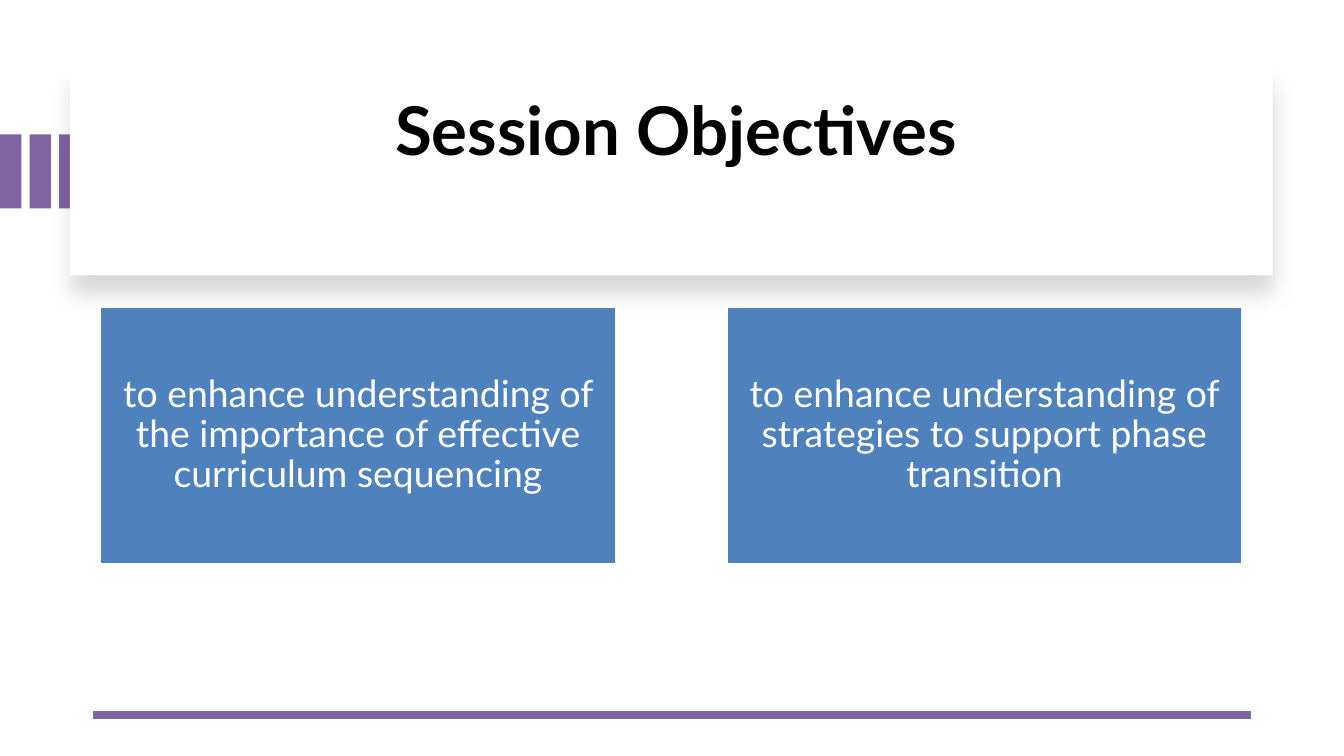
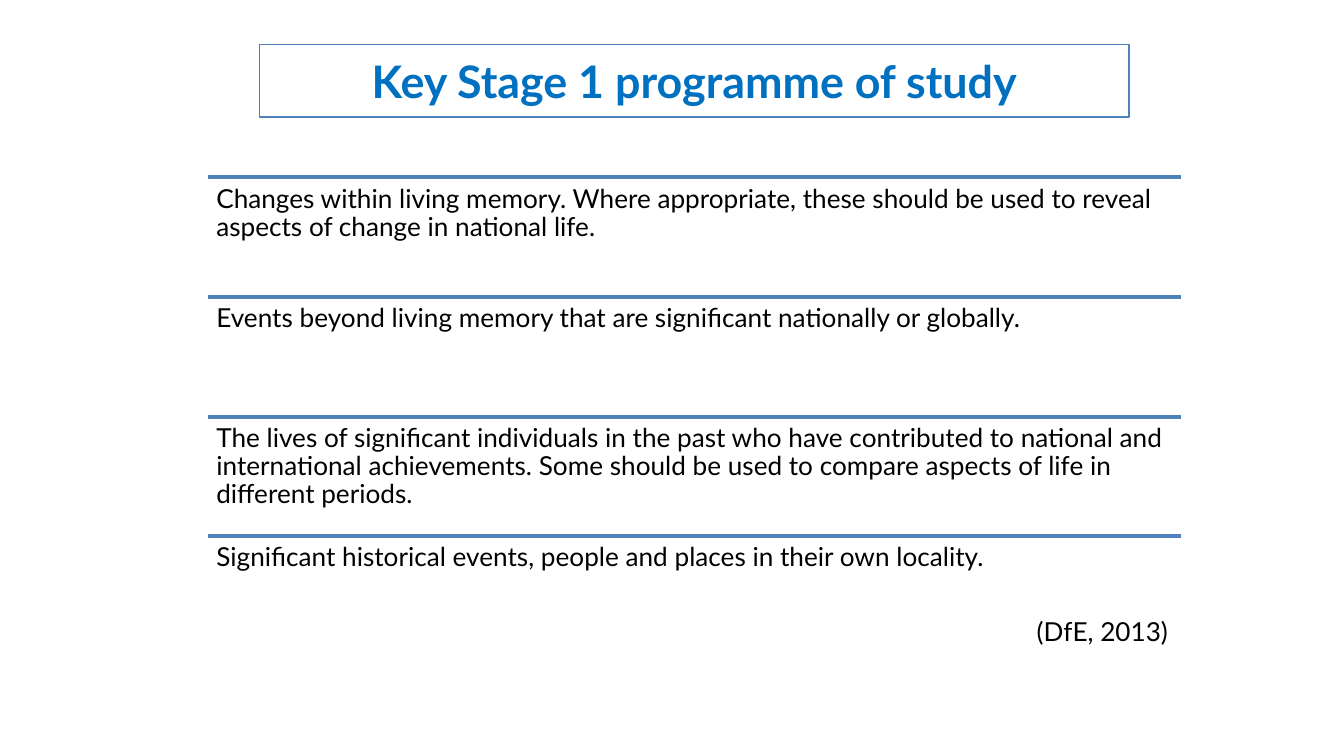
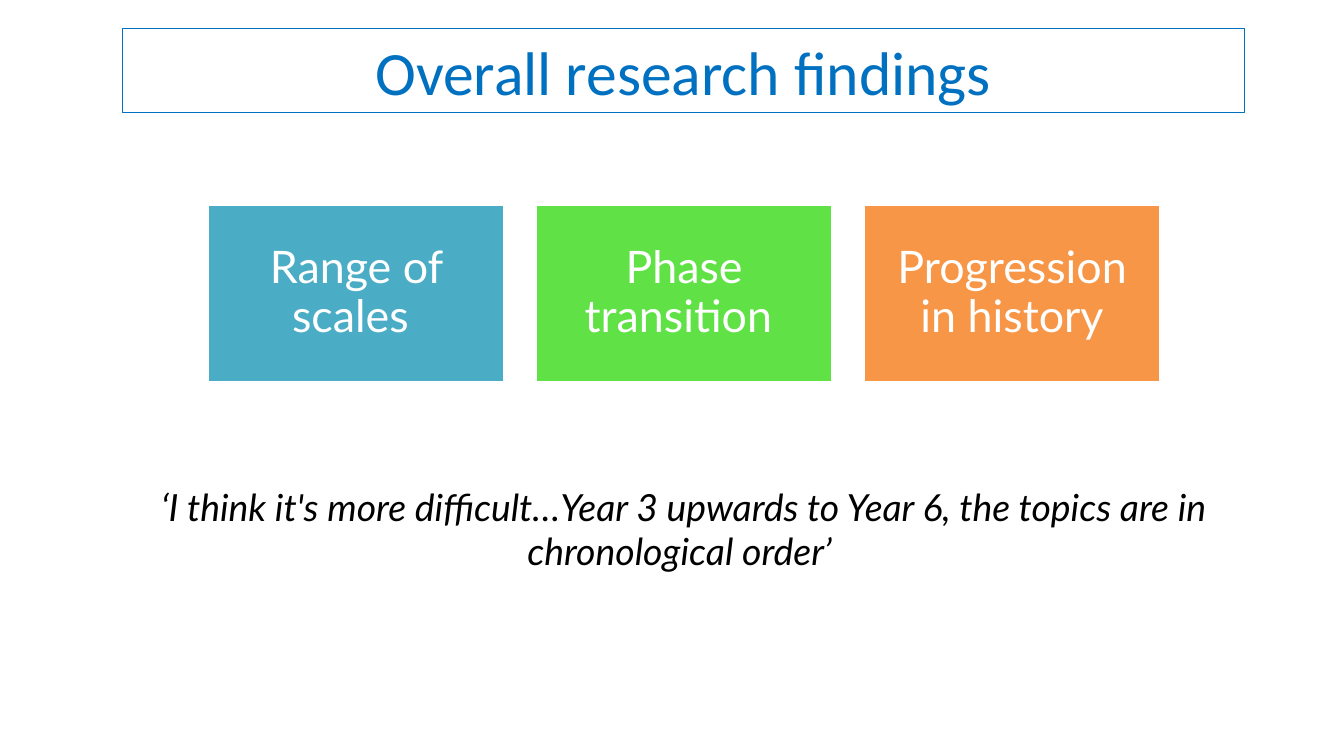
from lxml import etree
from pptx import Presentation
from pptx.dml.color import RGBColor
from pptx.enum.shapes import MSO_CONNECTOR, MSO_SHAPE
from pptx.enum.text import MSO_ANCHOR, MSO_AUTO_SIZE, PP_ALIGN
from pptx.oxml.ns import qn
from pptx.util import Pt

PX = 9144
RECT = MSO_SHAPE.RECTANGLE
STRAIGHT = MSO_CONNECTOR.STRAIGHT
TOP = MSO_ANCHOR.TOP
MIDDLE = MSO_ANCHOR.MIDDLE
FIXED = MSO_AUTO_SIZE.NONE
LEFT = PP_ALIGN.LEFT
CENTER = PP_ALIGN.CENTER
RIGHT = PP_ALIGN.RIGHT

BLACK = RGBColor(0x00, 0x00, 0x00)
WHITE = RGBColor(0xFF, 0xFF, 0xFF)
PURPLE = RGBColor(0x80, 0x64, 0xA2)
BLUE = RGBColor(0x4F, 0x81, 0xBD)
AZURE = RGBColor(0x00, 0x70, 0xC0)
TEAL = RGBColor(0x4B, 0xAC, 0xC6)
GREEN = RGBColor(0x60, 0xE1, 0x46)
ORANGE = RGBColor(0xF7, 0x96, 0x46)

FONT = "Lato"
GOALS = [
    "to enhance understanding of the importance of effective curriculum sequencing",
    "to enhance understanding of strategies to support phase transition",
]
TOPICS = [
    "Changes within living memory. Where appropriate, these should be used to "
    "reveal aspects of change in national life.",
    "Events beyond living memory that are significant nationally or globally.",
    "The lives of significant individuals in the past who have contributed to "
    "national and international achievements. Some should be used to compare "
    "aspects of life in different periods.",
    "Significant historical events, people and places in their own locality.",
]
THEMES = [
    ("Range of scales ", TEAL),
    ("Phase transition ", GREEN),
    ("Progression in history", ORANGE),
]
QUOTE = (
    "‘I think it's more difficult…Year 3 upwards to Year 6, "
    "the topics are in chronological order’ "
)


def scale(*nums):
    return [num * PX for num in nums]


def set_frame(frame, anchor, pads=(10, 5, 10, 5)):
    frame.word_wrap = True
    frame.auto_size = FIXED
    frame.vertical_anchor = anchor
    (frame.margin_left, frame.margin_top,
     frame.margin_right, frame.margin_bottom) = scale(*pads)


def add_run(para, text, size, color, align, space=1.0, font=FONT,
            bold=False, italic=False):
    para.alignment = align
    para.line_spacing = space
    run = para.add_run()
    run.text = text
    run.font.name = font
    run.font.size = Pt(size)
    run.font.color.rgb = color
    run.font.bold = bold
    run.font.italic = italic


def add_break(para, size):
    para.add_line_break()
    points = str(size * 100)
    etree.SubElement(para._p[-1], qn("a:rPr"), sz=points)
    etree.SubElement(para._p, qn("a:endParaRPr"), sz=points)


def add_title(slide, text, at, size, color, edge=None, space=1.0,
              font=FONT, bold=False):
    title = slide.shapes.title
    title.left, title.top, title.width, title.height = scale(*at)
    if edge is not None:
        title.line.color.rgb = edge
        title.line.width = Pt(0.75)
    set_frame(title.text_frame, MIDDLE)
    para = title.text_frame.paragraphs[0]
    add_run(para, text, size, color, CENTER, space, font, bold)
    title._element.getparent().append(title._element)
    return para


def add_rect(slide, at, fill):
    rect = slide.shapes.add_shape(RECT, *scale(*at))
    rect.shadow.inherit = False
    rect.fill.solid()
    rect.fill.fore_color.rgb = fill
    rect.line.fill.background()
    return rect


def add_tile(slide, at, fill, text, size, pad):
    tile = add_rect(slide, at, fill)
    tile.line.color.rgb = WHITE
    tile.line.width = Pt(2)
    set_frame(tile.text_frame, MIDDLE, [pad] * 4)
    add_run(tile.text_frame.paragraphs[0], text, size, WHITE, CENTER, 0.9)


def add_card(slide, at):
    card = add_rect(slide, at, WHITE)
    effects = card._element.spPr.find(qn("a:effectLst"))
    shade = etree.SubElement(
        effects, qn("a:outerShdw"), blurRad=str(Pt(11)), dist=str(Pt(10)),
        dir="5400000", algn="t", rotWithShape="0")
    black = etree.SubElement(shade, qn("a:srgbClr"), val=str(BLACK))
    etree.SubElement(black, qn("a:alpha"), val="15000")


def add_rule(slide, start, end, y, color, width):
    rule = slide.shapes.add_connector(STRAIGHT, *scale(start, y, end, y))
    rule.line.color.rgb = color
    rule.line.width = Pt(width)
    etree.SubElement(rule._element.spPr, qn("a:effectLst"))


def add_text(slide, at, pads=(10, 5, 10, 5)):
    frame = slide.shapes.add_textbox(*scale(*at)).text_frame
    set_frame(frame, TOP, pads)
    return frame


def new_slide(deck):
    return deck.slides.add_slide(deck.slide_layouts[5])


def build_goals(deck):
    slide = new_slide(deck)
    for col in range(3):
        add_rect(slide, (col * 22, 100, 16, 55), PURPLE)
    add_card(slide, (52, 50, 895, 155))
    para = add_title(slide, "Session Objectives", (86, 66, 834, 127), 36,
                     BLACK, space=0.9, bold=True)
    add_break(para, 36)
    add_rule(slide, 931, 69, 532, PURPLE, 4.5)
    for col, goal in enumerate(GOALS):
        add_tile(slide, (74 + col * 466, 228, 385, 192), BLUE, goal, 20, 1)


def build_study(deck):
    slide = new_slide(deck)
    add_title(slide, "Key Stage 1 programme of study", (193, 33, 647, 54), 24,
              AZURE, BLUE, bold=True)
    for row, topic in enumerate(TOPICS):
        top = 132 + row * 89
        add_rule(slide, 155, 879, top, BLUE, 2)
        frame = add_text(slide, (155, top, 724, 89), (6, 6, 10, 6))
        add_run(frame.paragraphs[0], topic, 14, BLACK, LEFT, 0.9)
    cite = frame.add_paragraph()
    cite.space_before = Pt(25)
    add_run(cite, "(DfE, 2013)", 14, BLACK, RIGHT, 0.9)


def build_finds(deck):
    slide = new_slide(deck)
    add_title(slide, "Overall research findings", (91, 21, 835, 63), 33,
              AZURE, AZURE, font="Calibri")
    for col, (theme, fill) in enumerate(THEMES):
        add_tile(slide, (154 + col * 244, 152, 222, 133), fill, theme, 24, 10)
    frame = add_text(slide, (59, 355, 900, 107))
    add_run(frame.paragraphs[0], QUOTE, 20, BLACK, CENTER, italic=True)


def main():
    deck = Presentation()
    deck.slide_width = 1000 * PX
    deck.slide_height = deck.slide_width * 9 // 16
    build_goals(deck)
    build_study(deck)
    build_finds(deck)
    deck.save("out.pptx")


if __name__ == "__main__":
    main()
